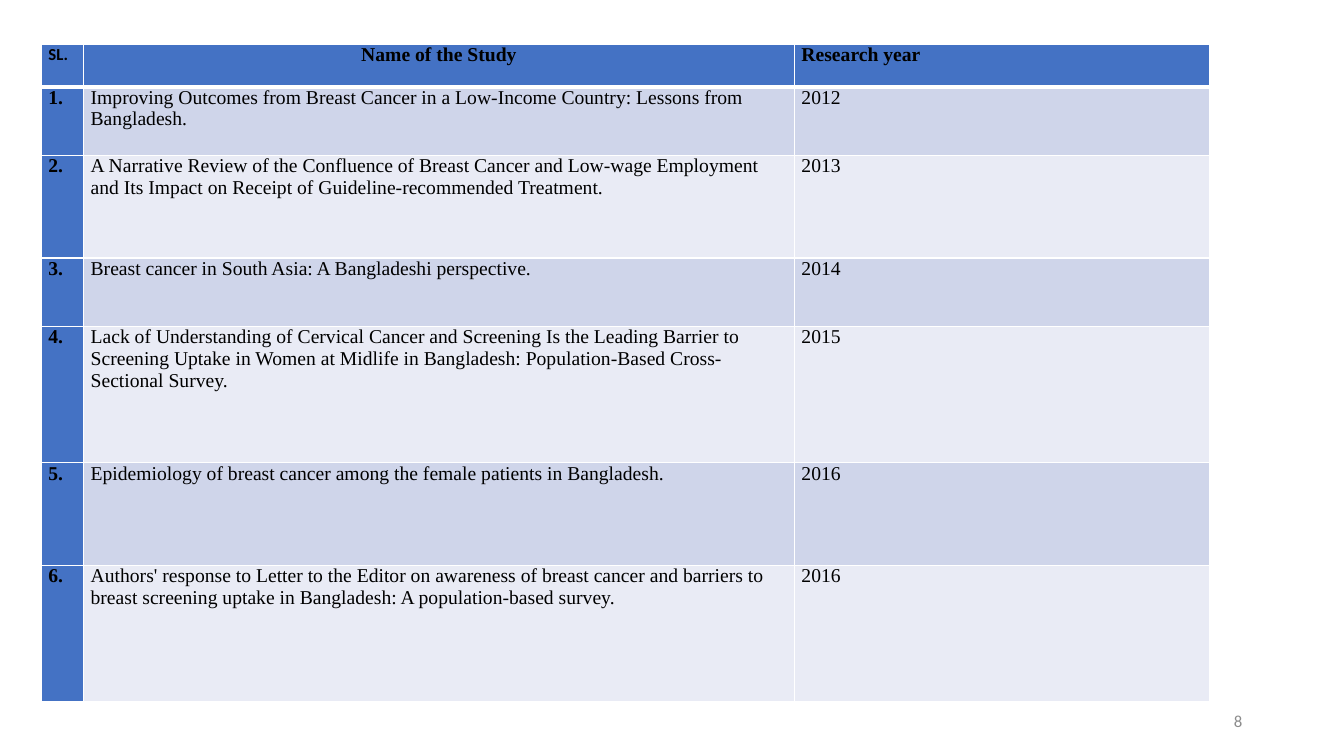
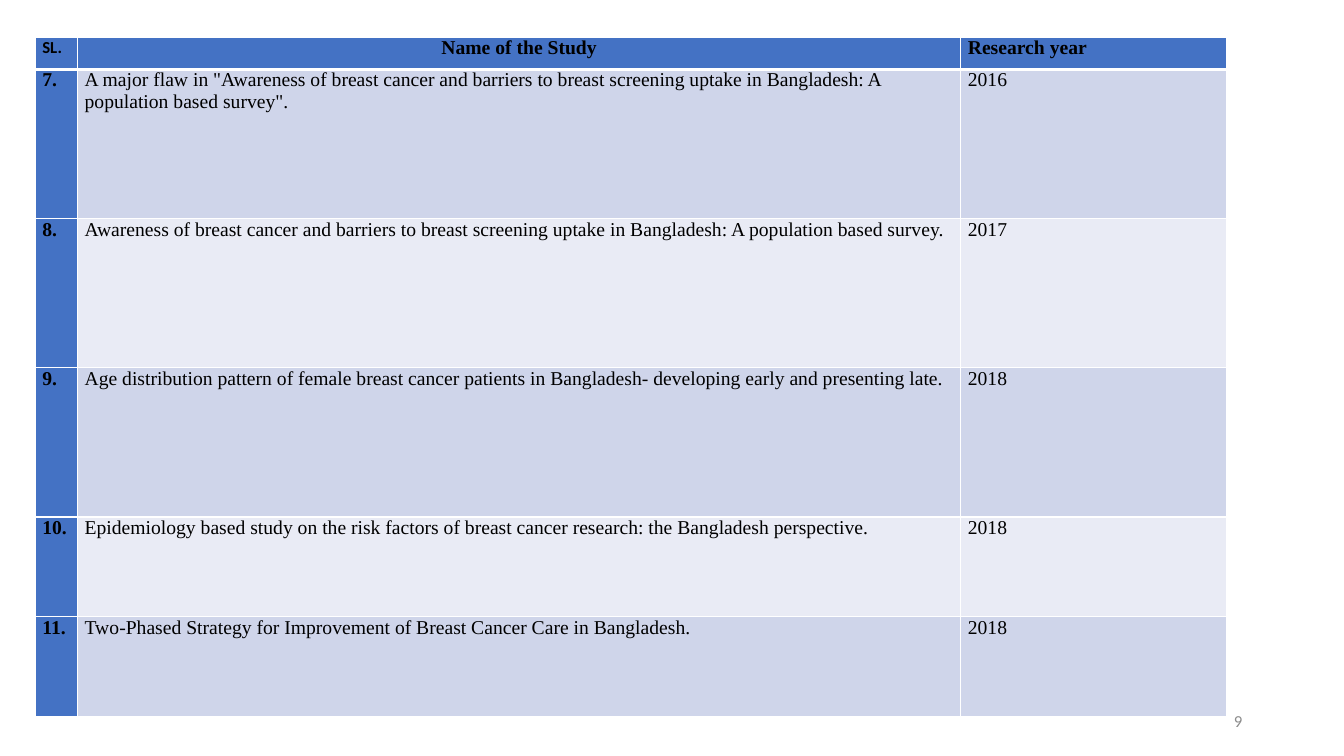
from lxml.etree import SubElement
from pptx import Presentation
from pptx.dml.color import RGBColor
from pptx.enum.text import MSO_ANCHOR, PP_ALIGN
from pptx.oxml.ns import qn
from pptx.util import Inches, Pt

# Shared look
BLACK, WHITE, GRAY = "000000", "FFFFFF", "8C8C8C"
BLUE = "4472C4"
BANDS = ("CFD5EA", "E9EBF5")
SERIF, SANS = "Times New Roman", "Calibri"
HEADINGS = ("SL.", "Name of the Study", "Research year")

# Studies, numbered in order over both slides
EARLY_STUDIES = [
    ("Improving Outcomes from Breast Cancer in a Low-Income Country: "
     "Lessons from Bangladesh.", "2012"),
    ("A Narrative Review of the Confluence of Breast Cancer and Low-wage Employment "
     "and Its Impact on Receipt of Guideline-recommended Treatment.", "2013"),
    ("Breast cancer in South Asia: A Bangladeshi perspective.", "2014"),
    ("Lack of Understanding of Cervical Cancer and Screening Is the Leading Barrier "
     "to Screening Uptake in Women at Midlife in Bangladesh: Population-Based "
     "Cross-Sectional Survey.", "2015"),
    ("Epidemiology of breast cancer among the female patients in Bangladesh.", "2016"),
    ("Authors' response to Letter to the Editor on awareness of breast cancer and "
     "barriers to breast screening uptake in Bangladesh: A population-based survey.",
     "2016"),
]
LATE_STUDIES = [
    ('A major flaw in "Awareness of breast cancer and barriers to breast screening '
     'uptake in Bangladesh: A population based survey".', "2016"),
    ("Awareness of breast cancer and barriers to breast screening uptake in "
     "Bangladesh: A population based survey.", "2017"),
    ("Age distribution pattern of female breast cancer patients in Bangladesh- "
     "developing early and presenting late.", "2018"),
    ("Epidemiology based study on the risk factors of breast cancer research: "
     "the Bangladesh perspective.", "2018"),
    ("Two-Phased Strategy for Improvement of Breast Cancer Care in Bangladesh.",
     "2018"),
]


def color(value):
    return RGBColor.from_string(value)


def write(frame, text, font=SERIF, size=14, ink=BLACK, bold=False,
          align=PP_ALIGN.LEFT):
    para = frame.paragraphs[0]
    para.alignment = align
    span = para.add_run()
    span.text = text
    span.font.name = font
    span.font.size = Pt(size)
    span.font.bold = bold
    span.font.color.rgb = color(ink)


def set_borders(cell, top=1, bottom=1):
    """Draw white cell borders; the lines must come before the fill."""
    properties = cell._tc.get_or_add_tcPr()
    widths = {"a:lnL": 1, "a:lnR": 1, "a:lnT": top, "a:lnB": bottom}
    for index, (tag, width) in enumerate(widths.items()):
        line = SubElement(properties, qn(tag), w=str(Pt(width)))
        fill = SubElement(line, qn("a:solidFill"))
        SubElement(fill, qn("a:srgbClr"), val=WHITE)
        properties.insert(index, line)


def fill_cell(cell, text, fill, top=1, bottom=1, **text_format):
    cell.margin_left = cell.margin_right = Inches(0.07)
    cell.margin_top = cell.margin_bottom = 0
    cell.fill.solid()
    cell.fill.fore_color.rgb = color(fill)
    set_borders(cell, top, bottom)
    write(cell.text_frame, text, **text_format)


def add_study_table(page, studies, first, left, top, widths, heights):
    shape = page.shapes.add_table(
        len(heights), len(widths), Inches(left), Inches(top),
        Inches(sum(widths)), Inches(sum(heights)))
    table = shape.table
    for column, width in zip(table.columns, widths):
        column.width = Inches(width)
    for row, height in zip(table.rows, heights):
        row.height = Inches(height)

    # Header row
    header_formats = (dict(font=SANS, size=12), dict(align=PP_ALIGN.CENTER), {})
    for index, (heading, text_format) in enumerate(zip(HEADINGS, header_formats)):
        fill_cell(table.cell(0, index), heading, BLUE, bottom=3, bold=True,
                  **text_format)

    # Study rows: blue number column, banded text
    for row, (name, year) in enumerate(studies, 1):
        band = BANDS[(row - 1) % 2]
        edge = 3 if row == 1 else 1
        number = f"{first + row - 1}."
        fill_cell(table.cell(row, 0), number, BLUE, top=edge, bold=True)
        fill_cell(table.cell(row, 1), name, band, top=edge)
        fill_cell(table.cell(row, 2), year, band, top=edge)


def add_page_number(page, number):
    box = page.shapes.add_textbox(Inches(9.42), Inches(6.95), Inches(3), Inches(0.4))
    frame = box.text_frame
    frame.word_wrap = True
    frame.vertical_anchor = MSO_ANCHOR.MIDDLE
    write(frame, str(number), font=SANS, size=12, ink=GRAY, align=PP_ALIGN.RIGHT)


def add_study_page(deck, number, studies, **table_layout):
    page = deck.slides.add_slide(deck.slide_layouts.get_by_name("Blank"))
    add_page_number(page, number)
    add_study_table(page, studies, **table_layout)


def main():
    deck = Presentation()
    deck.slide_width, deck.slide_height = Inches(13.33), Inches(7.5)
    add_study_page(deck, 8, EARLY_STUDIES, first=1, left=0.41, top=0.44,
                   widths=(0.42, 7.05, 4.12),
                   heights=(0.42, 0.68, 1.02, 0.68, 1.35, 1.02, 1.35))
    add_study_page(deck, 9, LATE_STUDIES, first=len(EARLY_STUDIES) + 1,
                   left=0.35, top=0.37, widths=(0.42, 8.76, 2.64),
                   heights=(0.32, 1.48, 1.48, 1.48, 0.99, 0.99))
    deck.save("out.pptx")


if __name__ == "__main__":
    main()
